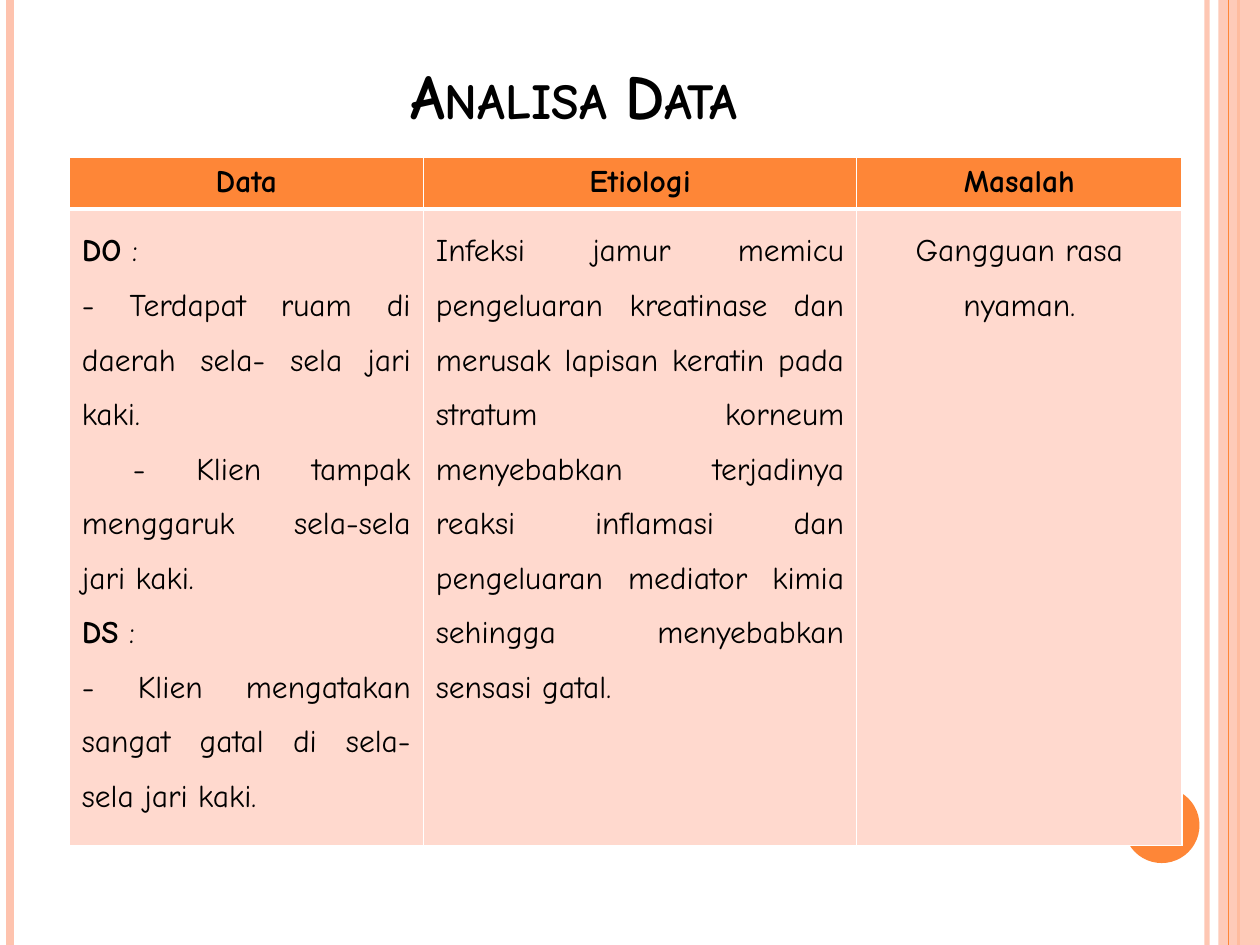
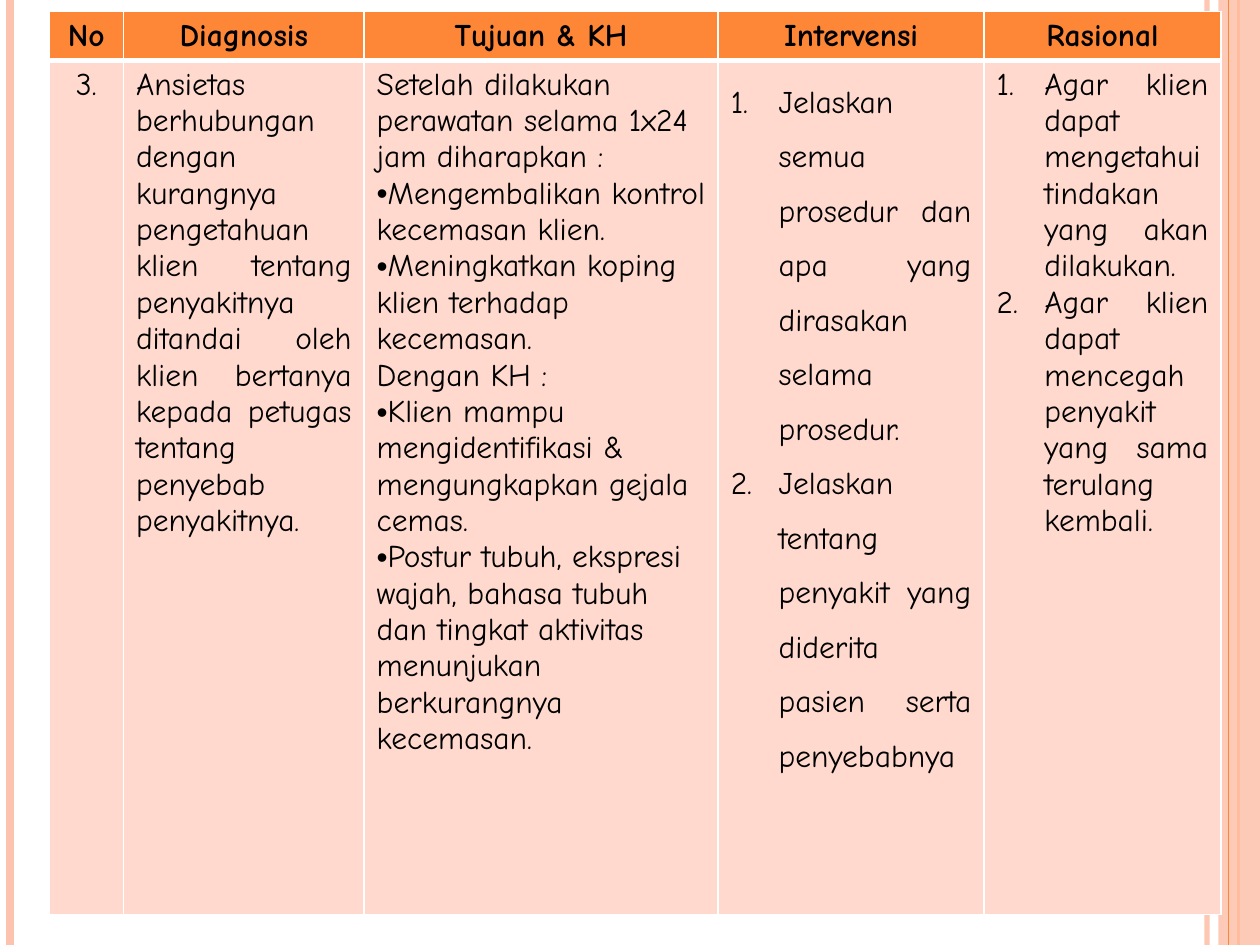
from dataclasses import dataclass
from typing import Optional

from lxml.etree import SubElement
from pptx import Presentation
from pptx.dml.color import RGBColor
from pptx.enum.shapes import MSO_CONNECTOR as Link, MSO_SHAPE as Kind
from pptx.enum.text import MSO_ANCHOR as Anchor, PP_ALIGN as Align
from pptx.oxml.ns import qn
from pptx.util import Inches, Pt

# Page grid: 100 columns by 75 rows
WIDE, HIGH = Inches(10), Inches(7.5)
COLS, ROWS = 100, 75
FONT = "Comic Neue"
HUES = {"main": "FE8637", "band": "FEC3AE", "cell": "FFD9CE",
        "edge": "FFFFFF", "text": "000000"}


@dataclass
class Rule:
    col: float
    width: float
    hue: str
    alpha: int = 100


@dataclass
class Block:
    kind: Kind
    col: float
    row: float
    cols: float
    rows: float
    hue: str
    alpha: int = 100


@dataclass
class Para:
    text: str
    lead: str = ""
    align: Optional[Align] = None
    space: Optional[float] = None
    mark: str = ""


@dataclass
class Grid:
    col: float
    row: float
    cols: list[float]
    rows: list[float]
    heads: list[str]
    body: list[list[Para]]


# Side bands and dot, from back to front
DECOR = [
    Rule(95.8, 3, "band", 93),
    Rule(0.8, 4.5, "band"),
    Rule(98.3, 1.5, "main"),
    Block(Kind.RECTANGLE, 96.7, 0, 3.3, ROWS, "band", 87),
    Rule(97.5, 0.75, "main"),
    Block(Kind.OVAL, 89.2, 62.5, 6, 6, "main"),
]


def across(cols: float) -> int:
    return round(WIDE * cols / COLS)


def down(rows: float) -> int:
    return round(HIGH * rows / ROWS)


def tint(fill, hue: str, alpha: int = 100) -> None:
    fill.solid()
    fill.fore_color.rgb = RGBColor.from_string(HUES[hue])
    if alpha < 100:
        color = fill._xPr.find(".//" + qn("a:srgbClr"))
        SubElement(color, qn("a:alpha"), val=str(alpha * 1000))


def add_rule(slide, rule: Rule) -> None:
    x = across(rule.col)
    line = slide.shapes.add_connector(Link.STRAIGHT, x, 0, x, HIGH)
    line.line.width = Pt(rule.width)
    tint(line.line.fill, rule.hue, rule.alpha)
    SubElement(line._element.spPr, qn("a:effectLst"))


def add_block(slide, block: Block) -> None:
    shape = slide.shapes.add_shape(
        block.kind, across(block.col), down(block.row),
        across(block.cols), down(block.rows))
    shape.shadow.inherit = False
    shape.line.fill.background()
    tint(shape.fill, block.hue, block.alpha)


def add_decor(slide) -> None:
    for part in DECOR:
        if isinstance(part, Rule):
            add_rule(slide, part)
        else:
            add_block(slide, part)


def style(para, size: float, bold: bool) -> None:
    font = para.font
    font.name, font.size, font.bold = FONT, Pt(size), bold
    font.color.rgb = RGBColor.from_string(HUES["text"])


def add_title(slide, text: str) -> None:
    box = slide.shapes.add_textbox(
        across(4.7), down(1.6), across(81.7), down(9.4))
    frame = box.text_frame
    frame.word_wrap = True
    frame.vertical_anchor = Anchor.BOTTOM
    para = frame.paragraphs[0]
    para.alignment = Align.CENTER
    run = para.add_run()
    run.text = text
    run._r.get_or_add_rPr().set("cap", "small")
    style(para, 36, True)


def add_mark(para, mark: str) -> None:
    props = para._p.get_or_add_pPr()
    if mark == "1.":
        props.set("marL", str(Inches(0.38)))
        props.set("indent", str(-Inches(0.38)))
        SubElement(props, qn("a:buFont"), typeface="+mj-lt")
        SubElement(props, qn("a:buAutoNum"), type="arabicPeriod")
    else:
        SubElement(props, qn("a:buFont"), typeface="Arial")
        SubElement(props, qn("a:buChar"), char=mark)


def add_edges(cell, top: float, base: float) -> None:
    props = cell._tc.get_or_add_tcPr()
    for side, width in zip("LRTB", (1, 1, top, base)):
        line = SubElement(props, qn(f"a:ln{side}"), w=str(Pt(width)))
        fill = SubElement(line, qn("a:solidFill"))
        SubElement(fill, qn("a:srgbClr"), val=HUES["edge"])


def fill_cell(cell, paras: list[Para], head: bool) -> None:
    add_edges(cell, *((1, 3) if head else (3, 1)))
    tint(cell.fill, "main" if head else "cell")
    frame = cell.text_frame
    for i, item in enumerate(paras):
        para = frame.add_paragraph() if i else frame.paragraphs[0]
        para.alignment = item.align
        para.line_spacing = item.space
        if item.mark:
            add_mark(para, item.mark)
        if item.lead:
            run = para.add_run()
            run.text = item.lead
            run.font.bold = True
        para.add_run().text = item.text
        style(para, 18, head)


def add_grid(slide, grid: Grid) -> None:
    table = slide.shapes.add_table(
        2, len(grid.cols), across(grid.col), down(grid.row),
        across(sum(grid.cols)), down(sum(grid.rows))).table
    table.horz_banding = False
    for row, rows in zip(table.rows, grid.rows):
        row.height = down(rows)
    for i, cols in enumerate(grid.cols):
        table.columns[i].width = across(cols)
        head = Para(grid.heads[i], align=Align.CENTER)
        fill_cell(table.cell(0, i), [head], True)
        fill_cell(table.cell(1, i), grid.body[i], False)


def wide(text: str, lead: str = "", mark: str = "") -> Para:
    return Para(text, lead, Align.JUSTIFY, 1.5, mark)


# Slide contents
DATA = Grid(
    5.5, 12.5, [28.1, 34.4, 25.8], [4.1, 48.5],
    ["Data", "Etiologi", "Masalah"],
    [
        [wide(" :", "DO"),
         wide("- Terdapat ruam di daerah sela- sela jari kaki."),
         wide(" - Klien tampak menggaruk sela-sela jari kaki."),
         wide(" :", "DS"),
         wide("- Klien mengatakan sangat gatal di sela- sela jari kaki.")],
        [wide("Infeksi jamur memicu pengeluaran kreatinase dan merusak "
              "lapisan keratin pada stratum korneum menyebabkan terjadinya "
              "reaksi inflamasi dan pengeluaran mediator kimia sehingga "
              "menyebabkan sensasi gatal.")],
        [Para("Gangguan rasa nyaman.", align=Align.CENTER, space=1.5)],
    ])

PLAN = Grid(
    3.9, 0.9, [5.9, 19.1, 28.1, 21.1, 18.8], [3.9, 67.8],
    ["No", "Diagnosis", "Tujuan & KH", "Intervensi", "Rasional"],
    [
        [Para("3.", align=Align.CENTER)],
        [Para("Ansietas berhubungan dengan kurangnya pengetahuan klien "
              "tentang penyakitnya ditandai oleh klien bertanya kepada "
              "petugas tentang penyebab penyakitnya.", align=Align.JUSTIFY)],
        [Para("Setelah dilakukan perawatan selama 1x24 jam diharapkan :"),
         Para("Mengembalikan kontrol kecemasan klien.", mark="•"),
         Para("Meningkatkan koping klien terhadap kecemasan.", mark="•"),
         Para("Dengan KH :"),
         Para("Klien mampu mengidentifikasi & mengungkapkan gejala cemas.",
              mark="•"),
         Para("Postur tubuh, ekspresi wajah, bahasa tubuh dan tingkat "
              "aktivitas menunjukan berkurangnya kecemasan.", mark="•")],
        [wide("Jelaskan semua prosedur dan apa yang dirasakan selama "
              "prosedur.", mark="1."),
         wide("Jelaskan tentang penyakit yang diderita pasien serta "
              "penyebabnya", mark="1.")],
        [Para("Agar klien dapat mengetahui tindakan yang akan dilakukan.",
              align=Align.JUSTIFY, mark="1."),
         Para("Agar klien dapat mencegah penyakit yang sama terulang "
              "kembali.", align=Align.JUSTIFY, mark="1.")],
    ])


def main() -> None:
    deck = Presentation()
    deck.slide_width, deck.slide_height = WIDE, HIGH
    for title, grid in (("Analisa Data", DATA), ("", PLAN)):
        slide = deck.slides.add_slide(deck.slide_layouts[6])
        add_decor(slide)
        if title:
            add_title(slide, title)
        add_grid(slide, grid)
    deck.save("out.pptx")


if __name__ == "__main__":
    main()
